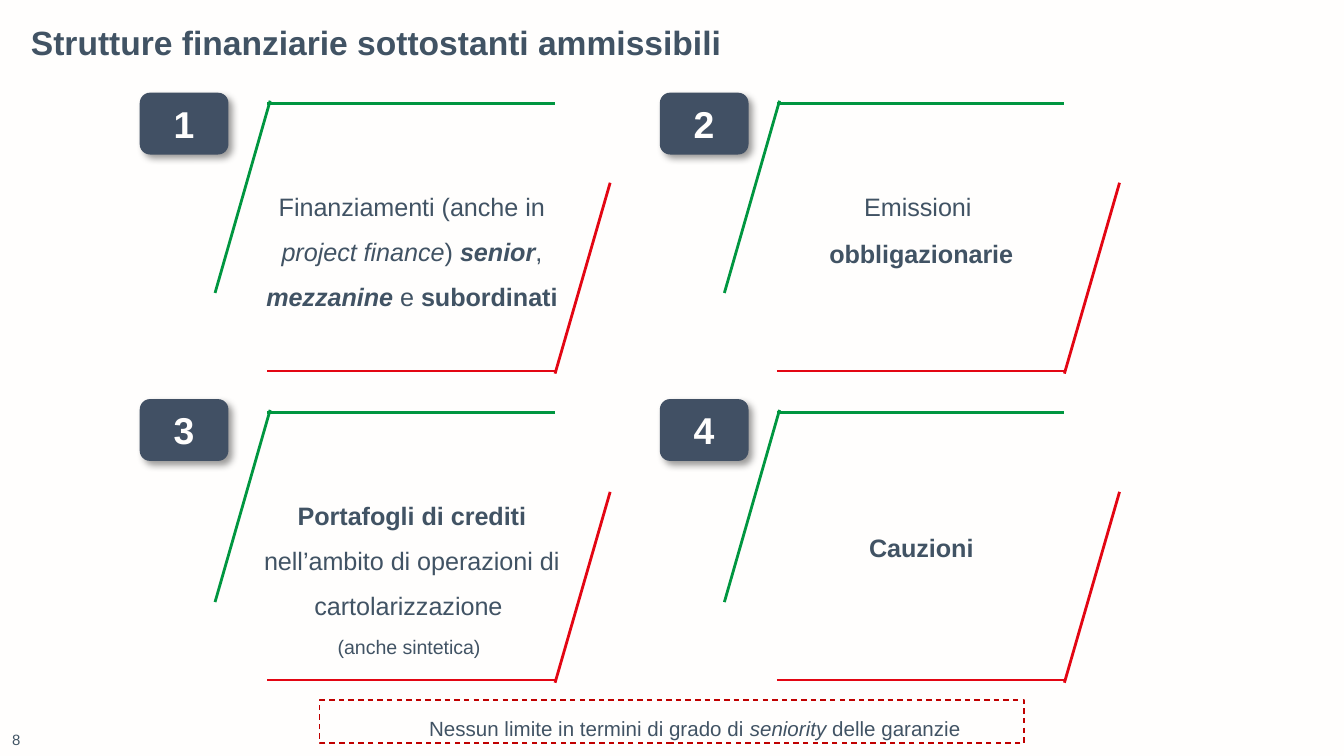
from lxml import etree
from pptx import Presentation
from pptx.dml.color import RGBColor
from pptx.enum.dml import MSO_LINE
from pptx.enum.shapes import MSO_CONNECTOR, MSO_SHAPE
from pptx.enum.text import MSO_ANCHOR, MSO_AUTO_SIZE, PP_ALIGN
from pptx.oxml.ns import qn
from pptx.util import Inches, Pt

LEFT, CENTER = PP_ALIGN.LEFT, PP_ALIGN.CENTER
TOP, MIDDLE, BOTTOM = MSO_ANCHOR.TOP, MSO_ANCHOR.MIDDLE, MSO_ANCHOR.BOTTOM
STRAIGHT = MSO_CONNECTOR.STRAIGHT
RECTANGLE, ROUNDED = MSO_SHAPE.RECTANGLE, MSO_SHAPE.ROUNDED_RECTANGLE
DASH = MSO_LINE.DASH

IVORY = RGBColor(0xFF, 0xFE, 0xFD)
SLATE = RGBColor(0x41, 0x53, 0x64)
PAGE_NUMBER = RGBColor(0x41, 0x54, 0x64)
BADGE = RGBColor(0x41, 0x50, 0x64)
GREEN = RGBColor(0x00, 0x96, 0x40)
RED = RGBColor(0xE3, 0x06, 0x13)
DARK_RED = RGBColor(0xC0, 0x00, 0x00)

FONT = "Arial"
INSETS = (0.1, 0.05, 0.1, 0.05)

# Left edges of the frames and badges, and their tops, by column and row
FRAME_X, FRAME_Y = (1.6, 5.39), (0.75, 3.05)
BADGE_X, BADGE_Y = (1.04, 4.91), (0.69, 2.97)

# Frame strokes relative to the frame's corner: start, end, colour
STROKES = [
    ((0.39, 0.02), (2.53, 0.02), GREEN),
    ((0, 1.43), (0.41, 0), GREEN),
    ((0.39, 2.01), (2.53, 2.01), RED),
    ((2.53, 2.03), (2.94, 0.61), RED),
]

# Each card: text top, height, paragraphs as (size, spans);
# a span is (text, style), with "b" for bold and "i" for italic
CARDS = [
    (1.26, 1.08, [(13.5, [("Finanziamenti (anche in ", ""), ("project finance", "i"),
                          (") ", ""), ("senior", "bi"), (", ", ""), ("mezzanine", "bi"),
                          (" e ", ""), ("subordinati", "b")])]),
    (1.26, 0.75, [(13.5, [("Emissioni ", "")]), (13.5, [("obbligazionarie", "b")])]),
    (3.56, 1.44, [(13.5, [("Portafogli di crediti ", "b"),
                          ("nell’ambito di operazioni di cartolarizzazione ", "")]),
                  (10.5, [("(anche sintetica) ", "")])]),
    (3.8, 0.4, [(13.5, [("Cauzioni", "b")])]),
]


def write_text(shape, paragraphs, color=SLATE, align=LEFT, anchor=TOP,
               insets=INSETS, line_spacing=1.0, space_before=0):
    """Fill a shape with paragraphs given as (size, spans)."""
    frame = shape.text_frame
    frame.word_wrap = True
    frame.auto_size = MSO_AUTO_SIZE.NONE
    frame.vertical_anchor = anchor
    (frame.margin_left, frame.margin_top,
     frame.margin_right, frame.margin_bottom) = map(Inches, insets)
    for index, (size, spans) in enumerate(paragraphs):
        para = frame.add_paragraph() if index else frame.paragraphs[0]
        para.alignment = align
        para.line_spacing = line_spacing
        para.space_before = Pt(space_before if index else 0)
        for text, style in spans:
            span = para.add_run()
            span.text = text
            font = span.font
            font.name, font.size = FONT, Pt(size)
            font.bold, font.italic = "b" in style, "i" in style
            font.color.rgb = color


def add_text(page, left, top, width, height, paragraphs, **text_format):
    box = page.shapes.add_textbox(*map(Inches, (left, top, width, height)))
    write_text(box, paragraphs, **text_format)


def add_stroke(page, start, end, color):
    stroke = page.shapes.add_connector(STRAIGHT, *map(Inches, start + end))
    stroke.line.color.rgb = color
    stroke.line.width = Pt(1.5)
    etree.SubElement(stroke._element.spPr, qn("a:effectLst"))


def add_shadow(shape):
    """Soft shadow towards the lower right."""
    shape.shadow.inherit = False
    effects = shape._element.spPr.find(qn("a:effectLst"))
    shadow = etree.SubElement(effects, qn("a:outerShdw"), blurRad=str(Pt(4)),
                              dist=str(Pt(3)), dir="2700000", algn="tl", rotWithShape="0")
    color = etree.SubElement(shadow, qn("a:srgbClr"), val="000000")
    etree.SubElement(color, qn("a:alpha"), val="40000")


def add_badge(page, left, top, number):
    badge = page.shapes.add_shape(ROUNDED, *map(Inches, (left, top, 0.66, 0.46)))
    badge.fill.solid()
    badge.fill.fore_color.rgb = BADGE
    badge.line.fill.background()
    add_shadow(badge)
    write_text(badge, [(20, [(str(number), "b")])], color=IVORY,
               align=CENTER, anchor=MIDDLE)


def add_frame(page, left, top):
    for (x1, y1), (x2, y2), color in STROKES:
        add_stroke(page, (left + x1, top + y1), (left + x2, top + y2), color)


def add_note(page):
    note = page.shapes.add_shape(RECTANGLE, *map(Inches, (2.38, 5.21, 5.24, 0.32)))
    note.shadow.inherit = False
    note.fill.background()
    note.line.color.rgb = DARK_RED
    note.line.width = Pt(0.75)
    note.line.dash_style = DASH
    spans = [("Nessun limite in termini di grado di ", ""), ("seniority", "i"),
             (" delle garanzie", "")]
    write_text(note, [(11, spans)], align=CENTER, anchor=MIDDLE,
               insets=(0, 0, 0.04, 0), line_spacing=1.5)
    properties = note.text_frame.paragraphs[0]._p.get_or_add_pPr()
    properties.set("marL", str(Inches(0.38)))
    properties.set("indent", "0")


def main():
    # Widescreen page, 16:9
    deck = Presentation()
    deck.slide_width, deck.slide_height = Inches(10), Inches(10) * 9 // 16
    page = deck.slides.add_slide(deck.slide_layouts[5])
    page.background.fill.solid()
    page.background.fill.fore_color.rgb = IVORY

    # Title and page number
    title = page.shapes.title
    title.left, title.top, title.width, title.height = map(Inches, (0.13, 0.15, 9.12, 0.31))
    write_text(title, [(18, [("Strutture finanziarie sottostanti ammissibili", "b")])],
               line_spacing=0.9)
    add_text(page, 0.09, 5.37, 1.1, 0.2, [(8, [("8", "")])],
             color=PAGE_NUMBER, anchor=BOTTOM, insets=(0, 0, 0, 0))

    # Two by two grid of numbered cards
    for index, (text_top, text_height, paragraphs) in enumerate(CARDS):
        row, column = divmod(index, 2)
        left = FRAME_X[column]
        add_frame(page, left, FRAME_Y[row])
        add_text(page, left + 0.21, text_top, 2.51, text_height, paragraphs,
                 align=CENTER, line_spacing=1.5, space_before=1)
        add_badge(page, BADGE_X[column], BADGE_Y[row], index + 1)

    # Closing remark
    add_note(page)
    deck.save("out.pptx")


if __name__ == "__main__":
    main()
